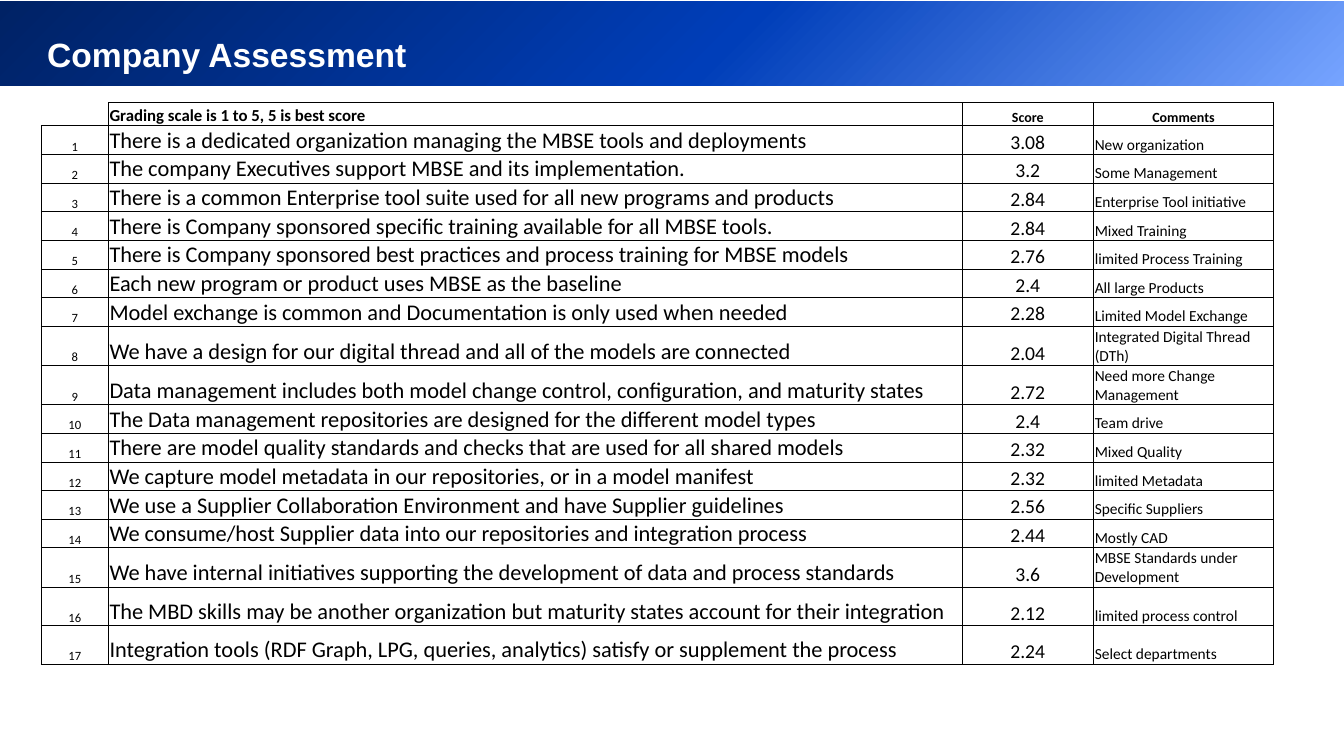
import copy
from dataclasses import dataclass

import lxml.etree
import pptx
import pptx.dml.color
import pptx.enum.shapes
import pptx.enum.text
import pptx.oxml.ns
import pptx.util

Cm, Pt = pptx.util.Cm, pptx.util.Pt
RGB = pptx.dml.color.RGBColor.from_string
qn = pptx.oxml.ns.qn
ALIGN = pptx.enum.text.PP_ALIGN
ANCHOR = pptx.enum.text.MSO_ANCHOR

TITLE = "Company Assessment"
HEADINGS = ("", "Grading scale is 1 to 5, 5 is best score", "Score", "Comments")
# statement, score, comment
ASSESSMENT = [
    ("There is a dedicated organization managing the MBSE tools and deployments", "3.08", "New organization"),
    ("The company Executives support MBSE and its implementation.", "3.2", "Some Management"),
    ("There is a common Enterprise tool suite used for all new programs and products", "2.84",
     "Enterprise Tool initiative"),
    ("There is Company sponsored specific training available for all MBSE tools.", "2.84", "Mixed Training"),
    ("There is Company sponsored best practices and process training for MBSE models", "2.76",
     "limited Process Training"),
    ("Each new program or product uses MBSE as the baseline", "2.4", "All large Products"),
    ("Model exchange is common and Documentation is only used when needed", "2.28", "Limited Model Exchange"),
    ("We have a design for our digital thread and all of the models are connected", "2.04",
     "Integrated Digital Thread (DTh)"),
    ("Data management includes both model change control, configuration, and maturity states", "2.72",
     "Need more Change Management"),
    ("The Data management repositories are designed for the different model types", "2.4", "Team drive"),
    ("There are model quality standards and checks that are used for all shared models", "2.32", "Mixed Quality"),
    ("We capture model metadata in our repositories, or in a model manifest", "2.32", "limited Metadata"),
    ("We use a Supplier Collaboration Environment and have Supplier guidelines", "2.56", "Specific Suppliers"),
    ("We consume/host Supplier data into our repositories and integration process", "2.44", "Mostly CAD"),
    ("We have internal initiatives supporting the development of data and process standards", "3.6",
     "MBSE Standards under Development"),
    ("The MBD skills may be another organization but maturity states account for their integration", "2.12",
     "limited process control"),
    ("Integration tools (RDF Graph, LPG, queries, analytics) satisfy or supplement the process", "2.24",
     "Select departments"),
]
TALL_ROWS = {9, 15, 16, 17}
COLUMN_WIDTHS = (1.69, 21.51, 3.32, 4.53)
COLUMN_ALIGN = (ALIGN.CENTER, ALIGN.LEFT, ALIGN.CENTER, ALIGN.LEFT)
HEADING_ALIGN = (ALIGN.CENTER, ALIGN.LEFT, ALIGN.CENTER, ALIGN.CENTER)


@dataclass(frozen=True)
class Theme:
    title_font: str = "Arial"
    table_font: str = "Calibri"
    title_size: int = 24
    heading_sizes: tuple = (10, 12, 10, 10)
    column_sizes: tuple = (9, 16, 14, 11)
    title_color: str = "FFFFFF"
    ink: str = "000000"
    band_stops: tuple = ((0, "76A4FF"), (0.46, "003EB9"), (1, "002265"))
    border: float = 0.5


THEME = Theme()


def set_font(paragraph, name, size, color, bold):
    font = paragraph.font
    font.name, font.size, font.bold = name, Pt(size), bold
    font.color.rgb = RGB(color)


def add_band(slide, width):
    band = slide.shapes.add_shape(
        pptx.enum.shapes.MSO_SHAPE.RECTANGLE, 0, Cm(0.05), width, Cm(2.11))
    band.shadow.inherit = False
    band.line.fill.background()
    band.fill.gradient()
    band.fill.gradient_angle = 135
    first_stop = band._element.spPr.find(".//" + qn("a:gs"))
    first_stop.addnext(copy.deepcopy(first_stop))
    for stop, (position, color) in zip(band.fill.gradient_stops, THEME.band_stops):
        stop.position = position
        stop.color.rgb = RGB(color)
    slide.shapes._spTree.insert(2, band._element)


def format_title(title, width):
    title.left, title.top, title.width, title.height = 0, Cm(0.3), width, Cm(1.57)
    frame = title.text_frame
    frame.text = TITLE
    frame.word_wrap = True
    frame.vertical_anchor = ANCHOR.MIDDLE
    frame.margin_left, frame.margin_top = Cm(1.19), Cm(0.64)
    frame.margin_right, frame.margin_bottom = Cm(1.27), 0
    heading = frame.paragraphs[0]
    heading.alignment = ALIGN.LEFT
    heading.line_spacing = Pt(26)
    set_font(heading, THEME.title_font, THEME.title_size, THEME.title_color, True)


def set_borders(cell, drawn_sides):
    """Rule the given sides (L, R, T, B) and leave the others clear."""
    properties = cell._tc.get_or_add_tcPr()
    for index, side in enumerate("LRTB"):
        line = lxml.etree.Element(qn(f"a:ln{side}"), w=str(Pt(THEME.border)))
        if side in drawn_sides:
            fill = lxml.etree.SubElement(line, qn("a:solidFill"))
            lxml.etree.SubElement(fill, qn("a:srgbClr"), val=THEME.ink)
        else:
            lxml.etree.SubElement(line, qn("a:noFill"))
        properties.insert(index, line)


def fill_cell(cell, text, size, alignment, bold):
    cell.fill.background()
    cell.margin_left = cell.margin_right = cell.margin_top = Cm(0.03)
    cell.margin_bottom = 0
    cell.vertical_anchor = ANCHOR.BOTTOM
    set_borders(cell, "LRTB" if text else "RB")
    paragraph = cell.text_frame.paragraphs[0]
    paragraph.alignment = alignment
    if text:
        paragraph.text = text
        set_font(paragraph, THEME.table_font, size, THEME.ink, bold)
    else:
        lxml.etree.SubElement(paragraph._p, qn("a:endParaRPr"), sz=str(size * 100))


def add_assessment(slide):
    rows = [HEADINGS] + [(str(n), *entry) for n, entry in enumerate(ASSESSMENT, 1)]
    heights = [0.58] + [0.97 if n in TALL_ROWS else 0.61 for n in range(1, len(rows))]
    table = slide.shapes.add_table(
        len(rows), len(HEADINGS), Cm(1.04), Cm(2.59),
        Cm(sum(COLUMN_WIDTHS)), Cm(sum(heights))).table
    table.first_row = table.horz_banding = False
    for column, width in zip(table.columns, COLUMN_WIDTHS):
        column.width = Cm(width)
    for r, (row, height) in enumerate(zip(rows, heights)):
        table.rows[r].height = Cm(height)
        is_heading = r == 0
        sizes = THEME.heading_sizes if is_heading else THEME.column_sizes
        alignments = HEADING_ALIGN if is_heading else COLUMN_ALIGN
        for c, (text, size, alignment) in enumerate(zip(row, sizes, alignments)):
            fill_cell(table.cell(r, c), text, size, alignment, is_heading)


def main():
    deck = pptx.Presentation()
    deck.slide_width, deck.slide_height = Cm(33.87), Cm(19.05)
    slide = deck.slides.add_slide(deck.slide_layouts[5])
    add_band(slide, deck.slide_width)
    format_title(slide.shapes.title, deck.slide_width)
    add_assessment(slide)
    deck.save("out.pptx")


if __name__ == "__main__":
    main()
